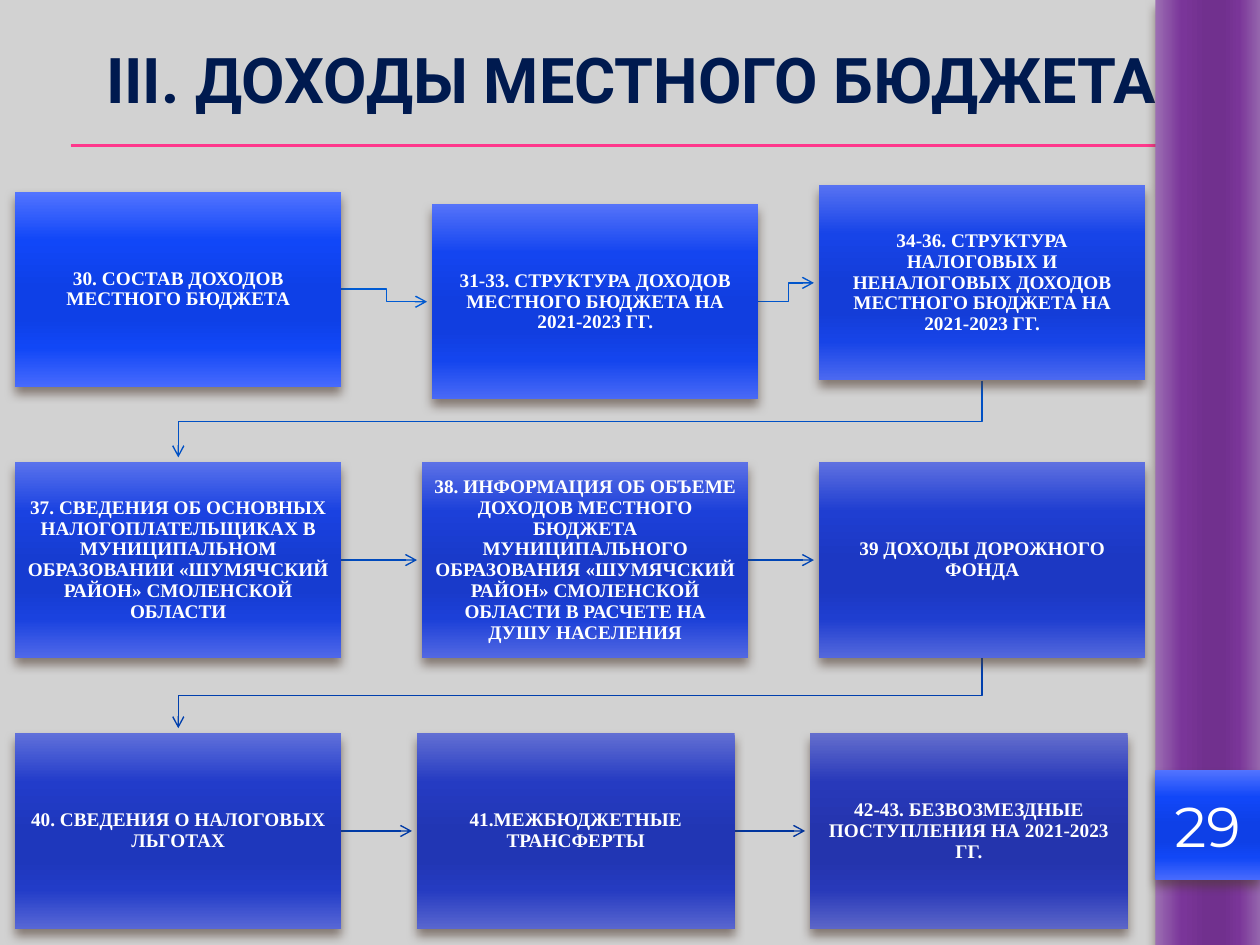
from dataclasses import dataclass

from lxml.etree import SubElement
from pptx import Presentation
from pptx.dml.color import RGBColor
from pptx.enum.shapes import MSO_CONNECTOR, MSO_SHAPE
from pptx.enum.text import MSO_ANCHOR, PP_ALIGN
from pptx.oxml.ns import qn
from pptx.util import Inches, Pt

# Grid: 100 columns by 75 rows over the slide
COLUMNS, ROWS = 100, 75
SLIDE_W, SLIDE_H = Inches(10), Inches(7.5)

COLORS = {
    "background": "D2D2D2", "rule": "FF388C", "shadow": "4E3B30",
    "title": "001A4F", "title_outline": "4E005F", "light": "FFFFFF",
    "arrow_first": "005BD3", "arrow_last": "00349E",
}
STOPS = (0, 25, 50, 65, 80, 100)
GRADIENTS = {
    "band": ("9C6FB3", "7A3599", "71308E", "71308E", "7A3598", "9566AD"),
    "first": ("5374FF", "1147F8", "0E40E7", "0E40E7", "1147F6", "476AFD"),
    "last": ("646ECD", "2839BA", "2434AD", "2434AD", "2839B9", "5C66C8"),
}
FONTS = {
    "title": {"name": "Roboto", "size": Pt(36), "bold": True},
    "number": {"name": "Montserrat", "size": Pt(32), "bold": False},
    "step": {"name": "Times New Roman", "size": Pt(11), "bold": True},
}

# Steps: left, top, width within the flow box, then wording
STEP_H, ARROW_GAP, BEND_SHIFT = 15.5, 0.4, 0.2
STEP_ROWS = [
    [(0, 0.5, 25.9, "30. СОСТАВ ДОХОДОВ МЕСТНОГО БЮДЖЕТА"),
     (33.1, 1.5, 25.9, "31-33. СТРУКТУРА ДОХОДОВ МЕСТНОГО БЮДЖЕТА НА 2021-2023 ГГ."),
     (63.8, 0, 25.9, "34-36. СТРУКТУРА НАЛОГОВЫХ И НЕНАЛОГОВЫХ ДОХОДОВ "
                     "МЕСТНОГО БЮДЖЕТА НА 2021-2023 ГГ.")],
    [(0, 22, 25.9, "37. СВЕДЕНИЯ ОБ ОСНОВНЫХ НАЛОГОПЛАТЕЛЬЩИКАХ В МУНИЦИПАЛЬНОМ "
                   "ОБРАЗОВАНИИ «ШУМЯЧСКИЙ РАЙОН» СМОЛЕНСКОЙ ОБЛАСТИ"),
     (32.3, 22, 25.9, "38. ИНФОРМАЦИЯ ОБ ОБЪЕМЕ ДОХОДОВ МЕСТНОГО БЮДЖЕТА "
                      "МУНИЦИПАЛЬНОГО ОБРАЗОВАНИЯ «ШУМЯЧСКИЙ РАЙОН» "
                      "СМОЛЕНСКОЙ ОБЛАСТИ В РАСЧЕТЕ НА ДУШУ НАСЕЛЕНИЯ"),
     (63.8, 22, 25.9, "39 ДОХОДЫ ДОРОЖНОГО ФОНДА")],
    [(0, 43.5, 25.9, "40. СВЕДЕНИЯ О НАЛОГОВЫХ ЛЬГОТАХ"),
     (31.9, 43.5, 25.2, "41.МЕЖБЮДЖЕТНЫЕ ТРАНСФЕРТЫ"),
     (63.1, 43.5, 25.2, "42-43. БЕЗВОЗМЕЗДНЫЕ ПОСТУПЛЕНИЯ НА 2021-2023 ГГ.")],
]


@dataclass
class Box:
    left: float
    top: float
    width: float
    height: float

    @property
    def right(self):
        return self.left + self.width

    @property
    def bottom(self):
        return self.top + self.height

    @property
    def center(self):
        return self.left + self.width / 2

    @property
    def middle(self):
        return self.top + self.height / 2

    def emu(self):
        return (*point(self.left, self.top), *point(self.width, self.height))


def point(column, row):
    return round(SLIDE_W * column / COLUMNS), round(SLIDE_H * row / ROWS)


def blend(first, last, share):
    pairs = ((int(first[i:i + 2], 16), int(last[i:i + 2], 16)) for i in (0, 2, 4))
    return "".join(f"{round(a + (b - a) * share):02X}" for a, b in pairs)


def add_node(parent, tag, **attributes):
    return SubElement(parent, qn(tag), {k: str(v) for k, v in attributes.items()})


def add_gradient_panel(slide, box, colors, angle=90):
    panel = slide.shapes.add_shape(MSO_SHAPE.RECTANGLE, *box.emu())
    panel.line.fill.background()
    panel.fill.background()
    panel.shadow.inherit = False
    properties = panel.element.spPr
    # Gradient in place of the empty fill
    gradient = add_node(properties, "a:gradFill", rotWithShape=1)
    stops = add_node(gradient, "a:gsLst")
    for position, color in zip(STOPS, colors):
        stop = add_node(stops, "a:gs", pos=position * 1000)
        add_node(stop, "a:srgbClr", val=color)
    add_node(gradient, "a:lin", ang=angle * 60000, scaled=0)
    properties.replace(properties.find(qn("a:noFill")), gradient)
    # Soft shadow below
    shadow = add_node(properties.find(qn("a:effectLst")), "a:outerShdw",
                      blurRad=Pt(6), dist=Pt(4), dir=90 * 60000, rotWithShape=0)
    shade = add_node(shadow, "a:srgbClr", val=COLORS["shadow"])
    add_node(shade, "a:alpha", val=60000)
    return panel


def write_text(holder, wording, role, color, spacing=1.0):
    frame = holder.text_frame
    frame.word_wrap = True
    frame.vertical_anchor = MSO_ANCHOR.MIDDLE
    paragraph = frame.paragraphs[0]
    paragraph.alignment = PP_ALIGN.CENTER
    paragraph.line_spacing = spacing
    run = paragraph.add_run()
    run.text = wording
    for attribute, value in FONTS[role].items():
        setattr(run.font, attribute, value)
    run.font.color.rgb = RGBColor.from_string(color)
    return run


def style_line(line, color, width):
    line.color.rgb = RGBColor.from_string(color)
    line.width = Pt(width)


def add_straight(slide, start, end, color, width):
    connector = slide.shapes.add_connector(
        MSO_CONNECTOR.STRAIGHT, *point(*start), *point(*end))
    style_line(connector.line, color, width)
    add_node(connector.element.spPr, "a:effectLst")
    return connector


def add_arrow(slide, route, color):
    if len(route) == 2:
        arrow = add_straight(slide, *route, color, 0.79)
    else:
        builder = slide.shapes.build_freeform(*point(*route[0]))
        builder.add_line_segments([point(*spot) for spot in route[1:]], close=False)
        arrow = builder.convert_to_shape()
        arrow.fill.background()
        arrow.shadow.inherit = False
        style_line(arrow.line, color, 0.79)
    add_node(arrow.element.spPr.find(qn("a:ln")), "a:tailEnd", type="arrow")


def arrow_route(start, end):
    if end.left < start.left:  # down to the next row
        tip = end.top - ARROW_GAP
        bend = (start.bottom + tip) / 2 + BEND_SHIFT
        return [(start.center, start.bottom), (start.center, bend),
                (end.center, bend), (end.center, tip)]
    tip = end.left - ARROW_GAP
    ends = [(start.right, start.middle), (tip, end.middle)]
    if start.middle == end.middle:
        return ends
    bend = (start.right + tip) / 2 + BEND_SHIFT
    return [ends[0], (bend, start.middle), (bend, end.middle), ends[1]]


def add_heading(slide, box):
    for row in (box.bottom - 1, box.bottom - 0.9):
        add_straight(slide, (box.left + 0.5, row), (COLUMNS, row), COLORS["rule"], 0.75)
    heading = slide.shapes.add_textbox(*box.emu())
    run = write_text(heading, "III. ДОХОДЫ МЕСТНОГО БЮДЖЕТА", "title", COLORS["title"])
    style_line_node = add_node(run.font._element, "a:ln", w=Pt(0.75))
    fill = add_node(style_line_node, "a:solidFill")
    add_node(fill, "a:srgbClr", val=COLORS["title_outline"])
    run.font._element.insert(0, style_line_node)


def add_side_band(slide, box):
    add_gradient_panel(slide, box, GRADIENTS["band"], angle=0)
    number_box = Box(box.left, box.top + 61.1, box.width, 8.7)
    number = add_gradient_panel(slide, number_box, GRADIENTS["first"])
    write_text(number, "29", "number", COLORS["light"])


def add_flow(slide, box):
    steps = [(Box(box.left + left, box.top + top, width, STEP_H), wording)
             for row in STEP_ROWS for left, top, width, wording in row]
    last = len(steps) - 1
    # Arrows behind the steps
    for index in range(last):
        color = blend(COLORS["arrow_first"], COLORS["arrow_last"], index / (last - 1))
        add_arrow(slide, arrow_route(steps[index][0], steps[index + 1][0]), color)
    # Steps, fading from first to last
    for index, (step_box, wording) in enumerate(steps):
        colors = [blend(a, b, index / last)
                  for a, b in zip(GRADIENTS["first"], GRADIENTS["last"])]
        step = add_gradient_panel(slide, step_box, colors)
        for side in ("left", "top", "right", "bottom"):
            setattr(step.text_frame, f"margin_{side}", Inches(0.09))
        write_text(step, wording, "step", COLORS["light"], spacing=0.9)


def main():
    deck = Presentation()
    deck.slide_width, deck.slide_height = SLIDE_W, SLIDE_H
    slide = deck.slides.add_slide(deck.slide_layouts[6])
    slide.background.fill.solid()
    slide.background.fill.fore_color.rgb = RGBColor.from_string(COLORS["background"])
    add_heading(slide, Box(5.1, 0, 90, 12.5))
    add_side_band(slide, Box(91.7, 0, 8.3, ROWS))
    add_flow(slide, Box(1.2, 14.7, 89.7, 59))
    deck.save("out.pptx")


if __name__ == "__main__":
    main()
